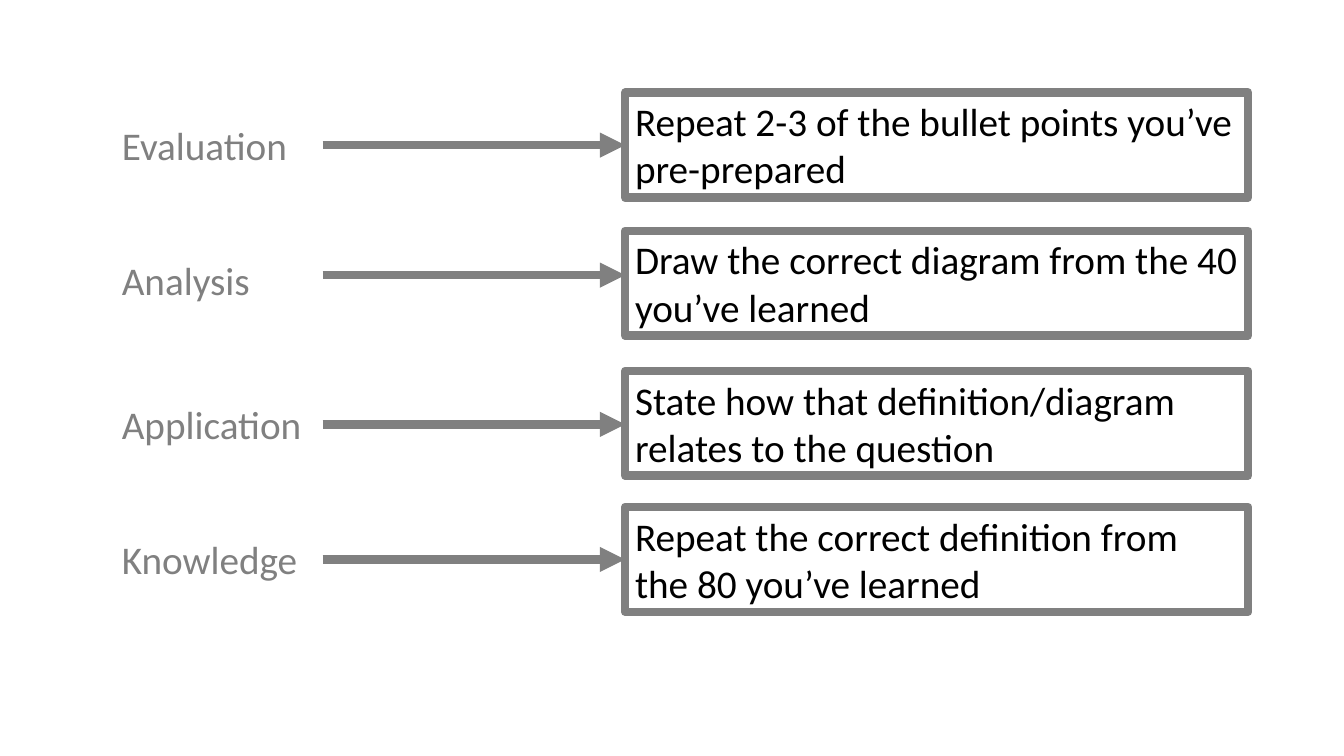
from lxml.etree import SubElement
from pptx import Presentation
from pptx.dml.color import RGBColor
from pptx.enum.shapes import MSO_CONNECTOR, MSO_SHAPE
from pptx.enum.text import MSO_ANCHOR, MSO_AUTO_SIZE, PP_ALIGN
from pptx.oxml.ns import qn
from pptx.util import Inches, Pt


def color(value):
    return RGBColor.from_string(value)


class SkillSlide:
    font = "Calibri"
    size = Pt(28)
    line_width = Pt(6)
    gray = "808080"
    black = "000000"

    def __init__(self, deck):
        self.page = deck.slides.add_slide(deck.slide_layouts[6])

    def add_text(self, shape, text, ink):
        frame = shape.text_frame
        frame.word_wrap = True
        frame.auto_size = MSO_AUTO_SIZE.SHAPE_TO_FIT_TEXT
        frame.vertical_anchor = MSO_ANCHOR.TOP
        para = frame.paragraphs[0]
        para.alignment = PP_ALIGN.LEFT
        span = para.add_run()
        span.text = text
        span.font.name = self.font
        span.font.size = self.size
        span.font.color.rgb = color(ink)

    def outline(self, shape):
        shape.line.color.rgb = color(self.gray)
        shape.line.width = self.line_width
        return shape._element.spPr.find(qn("a:ln"))

    def label(self, text, top):
        box = self.page.shapes.add_textbox(
            Inches(1.11), Inches(top), Inches(5.09), Inches(0.57))
        self.add_text(box, text, self.gray)

    def answer(self, group, text, top):
        box = group.shapes.add_shape(
            MSO_SHAPE.RECTANGLE, Inches(6.2), Inches(top), Inches(6.18), Inches(1.04))
        box.shadow.inherit = False
        box.fill.background()
        SubElement(self.outline(box), qn("a:round"))
        self.add_text(box, text, self.black)

    def arrow(self, group, height):
        arrow = group.shapes.add_connector(
            MSO_CONNECTOR.STRAIGHT, Inches(3.2), Inches(height), Inches(6.2), Inches(height))
        SubElement(self.outline(arrow), qn("a:tailEnd"), type="triangle")
        SubElement(arrow._element.spPr, qn("a:effectLst"))

    def link(self, text, box_top, arrow_height):
        group = self.page.shapes.add_group_shape()
        self.answer(group, text, box_top)
        self.arrow(group, arrow_height)


def main():
    deck = Presentation()
    deck.slide_width = Inches(13.33)
    deck.slide_height = Inches(7.5)
    slide = SkillSlide(deck)
    skills = [
        ("Knowledge", 5.26, "Repeat the correct definition from the 80 you’ve learned", 5.03, 5.55),
        ("Application", 3.92, "State how that definition/diagram relates to the question", 3.68, 4.21),
        ("Analysis", 2.49, "Draw the correct diagram from the 40 you’ve learned", 2.29, 2.73),
        ("Evaluation", 1.15, "Repeat 2-3 of the bullet points you’ve pre-prepared", 0.92, 1.44),
    ]
    for name, label_top, *_ in skills:
        slide.label(name, label_top)
    for _, _, answer, box_top, arrow_height in skills:
        slide.link(answer, box_top, arrow_height)
    deck.save("out.pptx")


if __name__ == "__main__":
    main()
